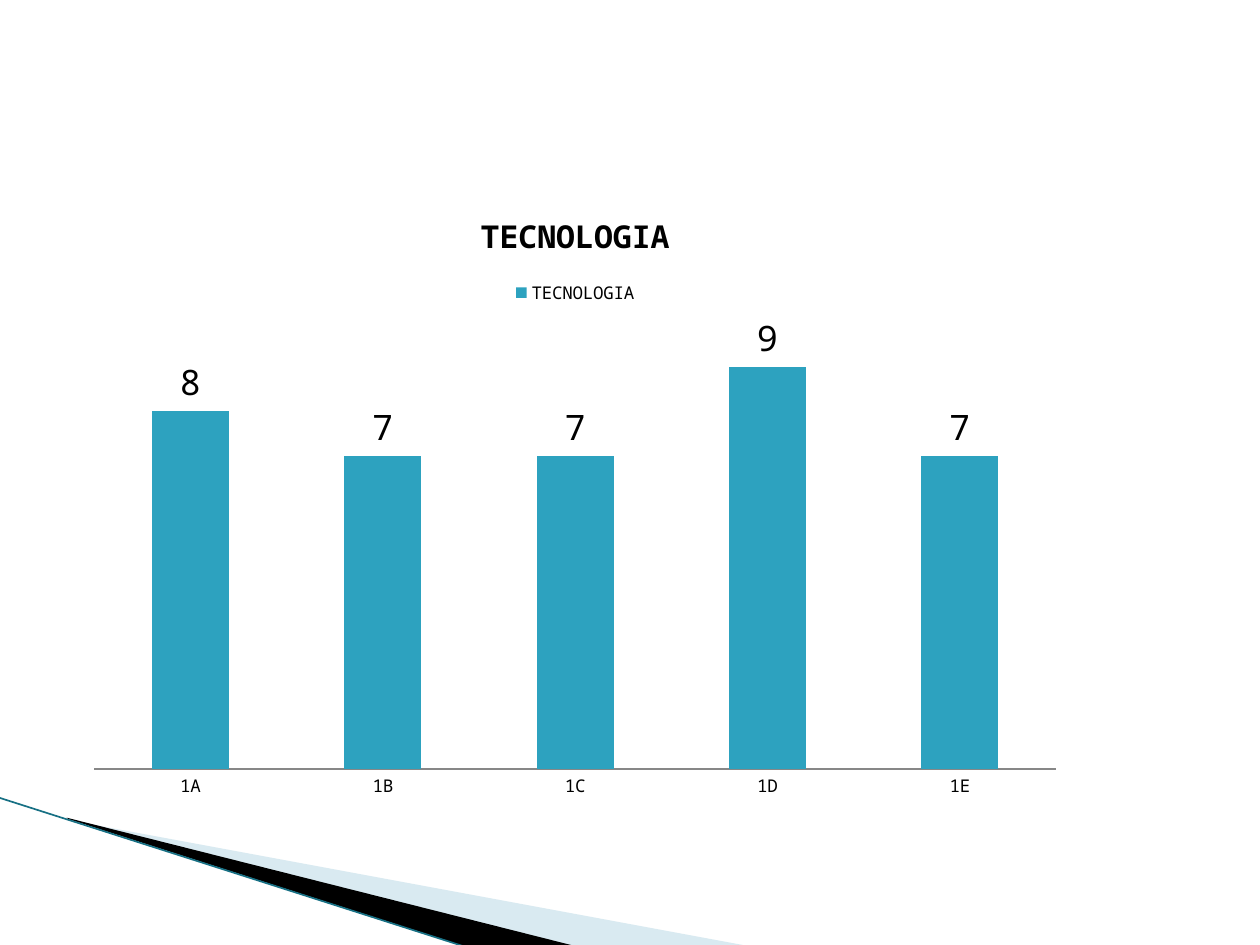
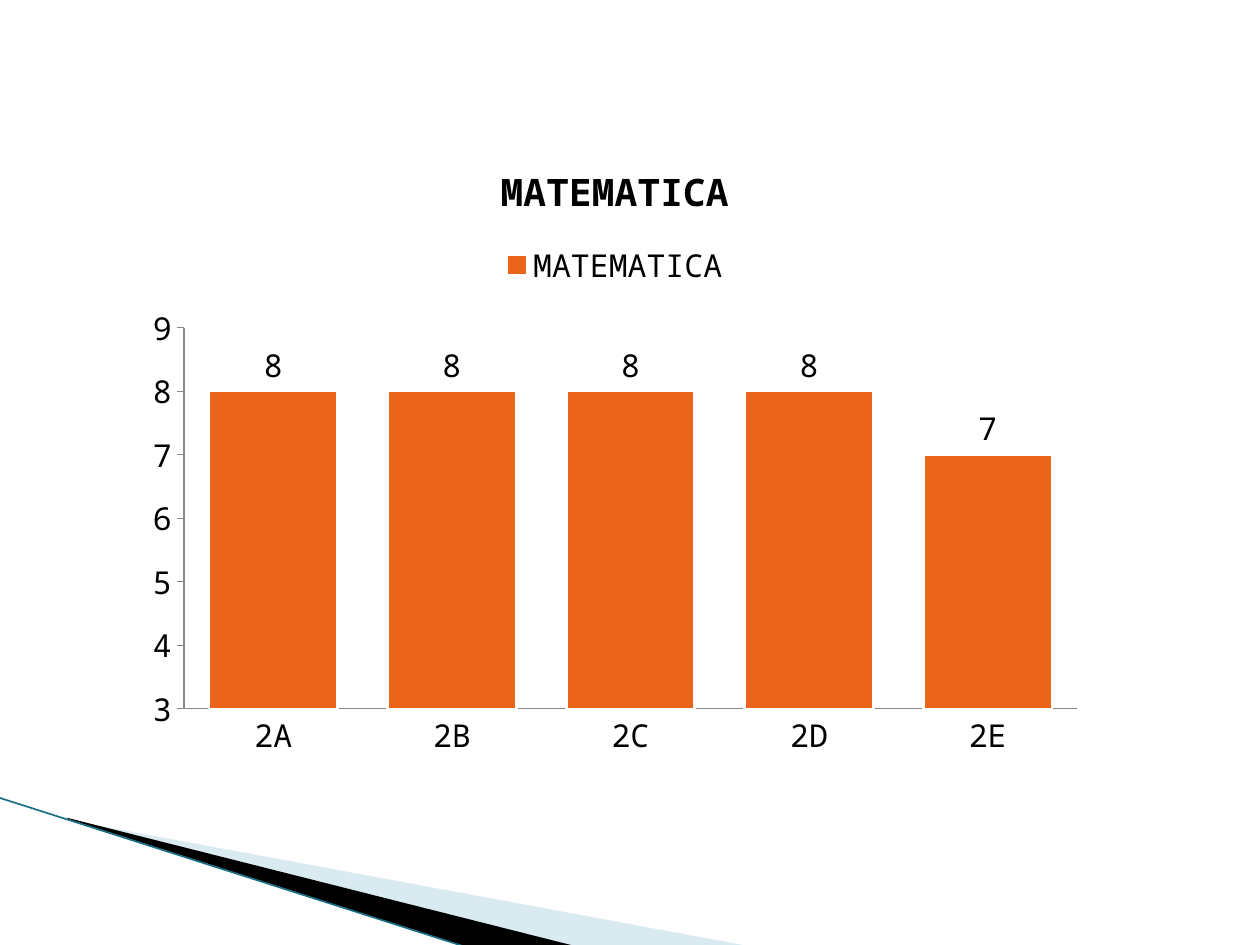
from typing import NamedTuple, Optional

from pptx import Presentation
from pptx import util as u
from pptx.chart.data import CategoryChartData
from pptx.dml.color import RGBColor
from pptx.enum import chart as ch
from pptx.enum import shapes
from pptx.oxml.ns import qn
from lxml import etree

FONT = "Noto Sans Mono"
BLACK = RGBColor(0x00, 0x00, 0x00)
WHITE = RGBColor(0xFF, 0xFF, 0xFF)
TEAL = RGBColor(0x2D, 0xA2, 0xBF)
DARK_TEAL = RGBColor(0x17, 0x70, 0x84)
PALE_TEAL = RGBColor(0xA0, 0xCB, 0xDC)
ORANGE = RGBColor(0xEB, 0x64, 0x1B)
AXIS_GRAY = RGBColor(0x87, 0x87, 0x87)


class Wedge(NamedTuple):
    points: list[tuple[float, float]]
    color: RGBColor
    opacity: int = 100


class GradeChart(NamedTuple):
    subject: str
    grades: dict[str, int]
    box: tuple[float, float, float, float]
    color: RGBColor
    gap: int
    text_size: float
    title_size: float
    label_size: float
    scale: tuple[int, int]
    show_scale: bool
    outline: Optional[RGBColor] = None


WEDGES = [
    Wedge([(0.55, 6.51), (5.95, 7.51), (4.56, 7.51), (0.55, 6.5)], PALE_TEAL, 40),
    Wedge([(0.53, 6.49), (4.57, 7.51), (3.72, 7.52), (0.54, 6.5)], BLACK),
]
EDGE = [(-0.01, 6.33), (3.71, 7.52)]

CHARTS = [
    GradeChart("TECNOLOGIA", {"1A": 8, "1B": 7, "1C": 7, "1D": 9, "1E": 7},
               (0.59, 1.47, 7.95, 4.96), TEAL, 150, 10, 18, 20, (0, 10), False),
    GradeChart("MATEMATICA", {"2A": 8, "2B": 8, "2C": 8, "2D": 8, "2E": 7},
               (1.06, 1.07, 7.64, 5.04), ORANGE, 39, 18, 21.6, 18, (3, 9), True, WHITE),
]


def set_all(target, values: dict) -> None:
    for name, value in values.items():
        setattr(target, name, value)


def style_font(font, size: float, bold: bool = False) -> None:
    set_all(font, {"name": FONT, "size": u.Pt(size), "bold": bold})
    font.color.rgb = BLACK


def draw_wedge(slide, wedge: Wedge) -> None:
    points = [(u.Inches(x), u.Inches(y)) for x, y in wedge.points]
    builder = slide.shapes.build_freeform(*points[0], scale=1.0)
    builder.add_line_segments(points[1:], close=True)
    shape = builder.convert_to_shape()
    shape.shadow.inherit = False
    shape.fill.solid()
    shape.fill.fore_color.rgb = wedge.color
    shape.line.fill.background()
    if wedge.opacity < 100:
        color = shape.fill._xPr.find(qn("a:solidFill")).find(qn("a:srgbClr"))
        etree.SubElement(color, qn("a:alpha"), val=str(wedge.opacity * 1000))


def draw_corner(slide) -> None:
    """Draw the wedges and the thin edge at the bottom left."""
    for wedge in WEDGES:
        draw_wedge(slide, wedge)
    ends = [u.Inches(length) for point in EDGE for length in point]
    edge = slide.shapes.add_connector(shapes.MSO_CONNECTOR.STRAIGHT, *ends)
    edge.line.color.rgb = DARK_TEAL
    edge.line.width = u.Pt(0.95)
    etree.SubElement(edge._element.spPr, qn("a:effectLst"))


def style_axes(chart, item: GradeChart) -> None:
    low, high = item.scale
    set_all(chart.value_axis, {
        "minimum_scale": low, "maximum_scale": high, "major_unit": 1,
        "visible": item.show_scale, "major_tick_mark": ch.XL_TICK_MARK.OUTSIDE,
    })
    chart.category_axis.major_tick_mark = ch.XL_TICK_MARK.NONE
    for axis in (chart.category_axis, chart.value_axis):
        set_all(axis, {"has_major_gridlines": False,
                       "minor_tick_mark": ch.XL_TICK_MARK.NONE})
        axis.format.line.color.rgb = AXIS_GRAY
        axis.format.line.width = u.Pt(0.75)
        style_font(axis.tick_labels.font, item.text_size)


def style_bars(plot, item: GradeChart) -> None:
    set_all(plot, {"gap_width": item.gap, "overlap": -25,
                   "vary_by_categories": False, "has_data_labels": True})
    set_all(plot.data_labels, {
        "show_value": True, "number_format": "0", "number_format_is_linked": False,
        "position": ch.XL_LABEL_POSITION.OUTSIDE_END,
    })
    style_font(plot.data_labels.font, item.label_size)
    bars = plot.series[0]
    bars.invert_if_negative = False
    bars.format.fill.solid()
    bars.format.fill.fore_color.rgb = item.color
    if item.outline is not None:
        bars.format.line.color.rgb = item.outline
        bars.format.line.width = u.Pt(1.5)


def draw_chart(slide, item: GradeChart) -> None:
    data = CategoryChartData(number_format="0")
    data.categories = list(item.grades)
    data.add_series(item.subject, list(item.grades.values()))
    box = [u.Inches(length) for length in item.box]
    chart = slide.shapes.add_chart(ch.XL_CHART_TYPE.COLUMN_CLUSTERED, *box, data).chart

    style_font(chart.font, item.text_size)
    set_all(chart, {"has_title": True, "has_legend": True})
    chart.chart_title.include_in_layout = False
    heading = chart.chart_title.text_frame
    heading.text = item.subject
    style_font(heading.paragraphs[0].runs[0].font, item.title_size, bold=True)
    set_all(chart.legend, {"position": ch.XL_LEGEND_POSITION.TOP,
                           "include_in_layout": False})
    style_font(chart.legend.font, item.text_size)
    style_axes(chart, item)
    style_bars(chart.plots[0], item)


def main() -> None:
    deck = Presentation()
    set_all(deck, {"slide_width": u.Inches(10), "slide_height": u.Inches(7.5)})
    for item in CHARTS:
        slide = deck.slides.add_slide(deck.slide_layouts[6])
        draw_corner(slide)
        draw_chart(slide, item)
    deck.save("out.pptx")


if __name__ == "__main__":
    main()
